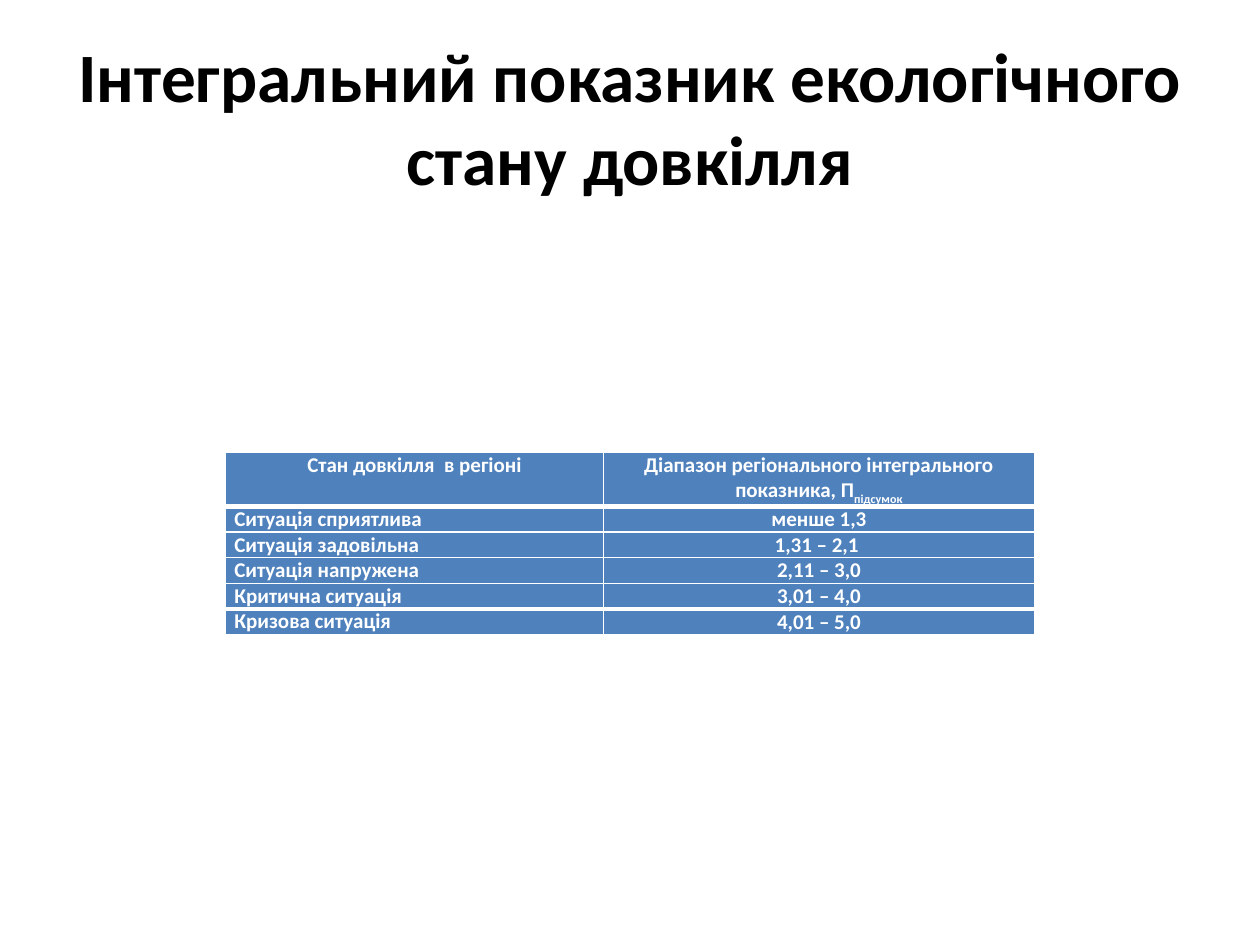
from dataclasses import dataclass

from lxml import etree
from pptx import Presentation
from pptx import util as u
from pptx.dml.color import RGBColor
from pptx.enum import text
from pptx.oxml import ns

TITLE = "Інтегральний показник екологічного стану довкілля"
HEADER = [
    [("Стан довкілля  в регіоні", False)],
    [("Діапазон регіонального інтегрального показника, П", False), ("підсумок", True)],
]
SITUATIONS = [
    ("Ситуація сприятлива", "менше 1,3"),
    ("Ситуація задовільна", "1,31 – 2,1 "),
    ("Ситуація напружена", "2,11 – 3,0"),
    ("Критична ситуація", "3,01 – 4,0"),
    ("Кризова ситуація", "4,01 – 5,0"),
]
ROWS = [HEADER] + [[[(label, False)] for label in pair] for pair in SITUATIONS]
COLUMN_WIDTHS = [3, 3.42]
LINE_HEIGHT = 0.2
TABLE_TOP = 3.59


@dataclass(frozen=True)
class Theme:
    font: str = "Calibri"
    ink: str = "000000"
    paper: str = "FFFFFF"
    cell: str = "4F81BD"
    title_size: float = 39.6
    cell_size: float = 12
    thin: float = 1
    thick: float = 3


THEME = Theme()


def write(frame, runs, *, size, color, align, anchor):
    frame.word_wrap = True
    frame.vertical_anchor = anchor
    paragraph = frame.paragraphs[0]
    paragraph.alignment = align
    for words, subscript in runs:
        run = paragraph.add_run()
        run.text = words
        font = run.font
        font.name, font.size, font.bold = THEME.font, u.Pt(size), True
        font.color.rgb = RGBColor.from_string(color)
        if subscript:
            font._element.set("baseline", "-25000")


def add_borders(cell, widths):
    properties = cell._tc.get_or_add_tcPr()
    for side, width in widths.items():
        line = etree.SubElement(properties, ns.qn(f"a:ln{side}"), w=str(u.Pt(width)))
        fill = etree.SubElement(line, ns.qn("a:solidFill"))
        etree.SubElement(fill, ns.qn("a:srgbClr"), val=THEME.paper)


def add_title(slide):
    title = slide.shapes.title
    title.left, title.top = u.Inches(0.5), u.Inches(0.3)
    title.width, title.height = u.Inches(9), u.Inches(1.25)
    title.text_frame.auto_size = text.MSO_AUTO_SIZE.NONE
    write(title.text_frame, [(TITLE, False)], size=THEME.title_size, color=THEME.ink,
          align=text.PP_ALIGN.CENTER, anchor=text.MSO_ANCHOR.MIDDLE)


def add_situations(slide, slide_width):
    width = u.Inches(sum(COLUMN_WIDTHS))
    height = u.Inches(LINE_HEIGHT * (len(ROWS) + 1))
    table = slide.shapes.add_table(len(ROWS), len(COLUMN_WIDTHS), (slide_width - width) // 2,
                                   u.Inches(TABLE_TOP), width, height).table
    for column, column_width in zip(table.columns, COLUMN_WIDTHS):
        column.width = u.Inches(column_width)
    last = len(ROWS) - 1
    thick_edges = {0, last - 1}
    for r, row in enumerate(ROWS):
        table.rows[r].height = u.Inches(LINE_HEIGHT * (2 if r == 0 else 1))
        for c, runs in enumerate(row):
            cell = table.cell(r, c)
            add_borders(cell, {
                "L": THEME.thin,
                "R": THEME.thin,
                "T": THEME.thick if r - 1 in thick_edges else THEME.thin,
                "B": THEME.thick if r in thick_edges else THEME.thin,
            })
            cell.fill.solid()
            cell.fill.fore_color.rgb = RGBColor.from_string(THEME.cell)
            cell.margin_left = cell.margin_right = u.Inches(0.07)
            cell.margin_top = cell.margin_bottom = 0
            is_label, is_header = c == 0, r == 0
            anchor = text.MSO_ANCHOR.TOP if is_label or is_header else text.MSO_ANCHOR.MIDDLE
            align = text.PP_ALIGN.JUSTIFY if is_label and not is_header else text.PP_ALIGN.CENTER
            write(cell.text_frame, runs, size=THEME.cell_size, color=THEME.paper,
                  align=align, anchor=anchor)
            cell.vertical_anchor = anchor


def main():
    presentation = Presentation()
    presentation.slide_width, presentation.slide_height = u.Inches(10), u.Inches(7.5)
    slide = presentation.slides.add_slide(presentation.slide_layouts.get_by_name("Title Only"))
    add_title(slide)
    add_situations(slide, presentation.slide_width)
    presentation.save("out.pptx")


if __name__ == "__main__":
    main()
